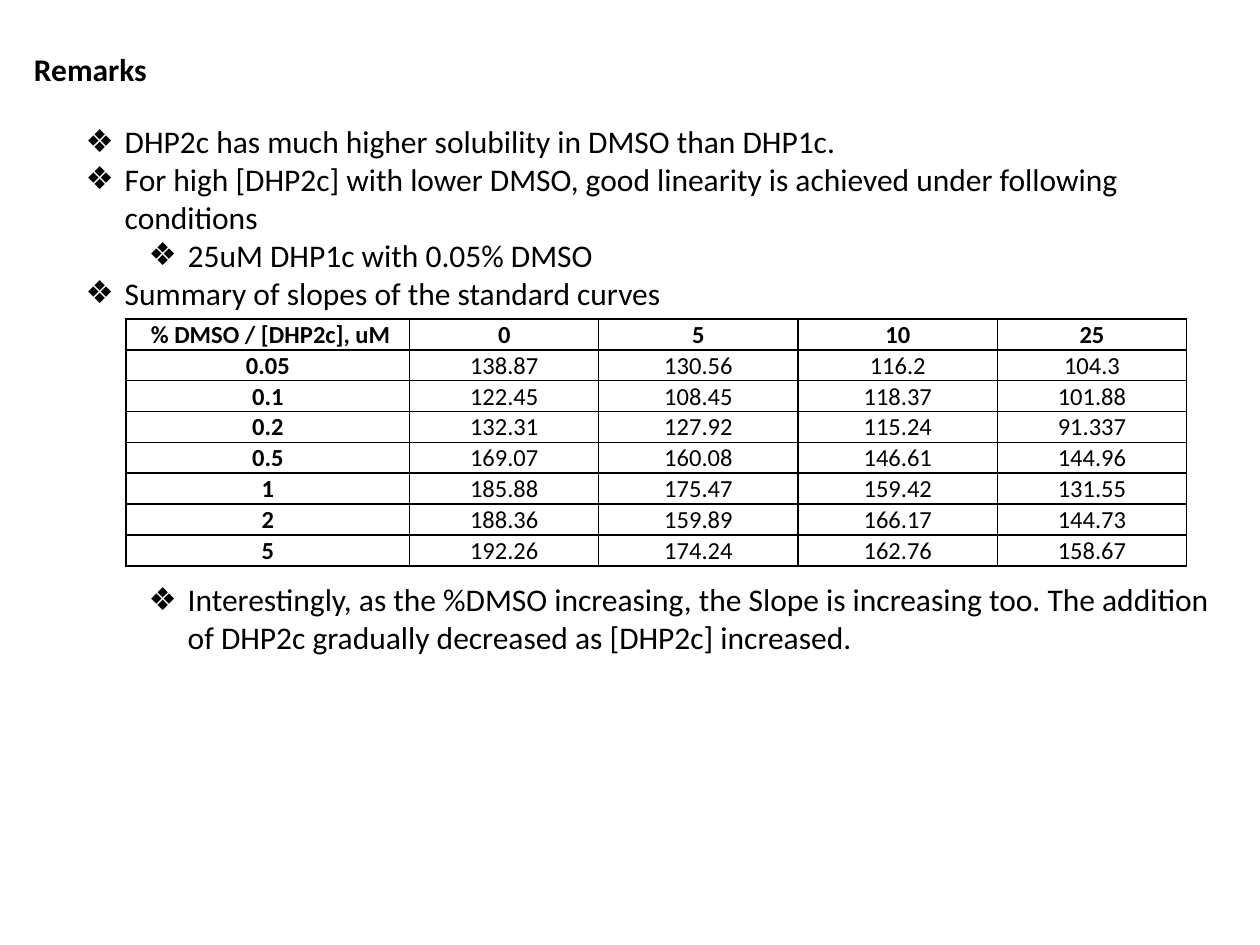
import dataclasses

import lxml.etree
import pptx
import pptx.dml.color
import pptx.enum.text
import pptx.oxml.ns
import pptx.util

Cm = pptx.util.Cm
Pt = pptx.util.Pt
ALIGN = pptx.enum.text.PP_ALIGN
ANCHOR = pptx.enum.text.MSO_ANCHOR
AUTO_SIZE = pptx.enum.text.MSO_AUTO_SIZE
qn = pptx.oxml.ns.qn

COLORS = {"ink": "000000"}
FONT = "Calibri"
LINE_HEIGHT = 1.22  # line height of the font, in ems
TEXT_SIZE = 18
TABLE_LINES = 7  # text lines that make room for the table


@dataclasses.dataclass
class Remark:
    text: str
    level: int = 0
    lines_before: int = 0


REMARKS = [
    Remark("DHP2c has much higher solubility in DMSO than DHP1c."),
    Remark("For high [DHP2c] with lower DMSO, good linearity is achieved "
           "under following conditions"),
    Remark("25uM DHP1c with 0.05% DMSO", level=1),
    Remark("Summary of slopes of the standard curves"),
    Remark("Interestingly, as the %DMSO increasing, the Slope is increasing too. "
           "The addition of DHP2c gradually decreased as [DHP2c] increased.",
           level=1, lines_before=TABLE_LINES),
]

SLOPES = [
    (" % DMSO / [DHP2c], uM", "0", "5", "10", "25"),
    ("0.05", "138.87", "130.56", "116.2", "104.3"),
    ("0.1", "122.45", "108.45", "118.37", "101.88"),
    ("0.2", "132.31", "127.92", "115.24", "91.337"),
    ("0.5", "169.07", "160.08", "146.61", "144.96"),
    ("1", "185.88", "175.47", "159.42", "131.55"),
    ("2", "188.36", "159.89", "166.17", "144.73"),
    ("5", "192.26", "174.24", "162.76", "158.67"),
]
COLUMN_WIDTHS = [Cm(5.72), Cm(3.81), Cm(4.02), Cm(4.02), Cm(3.81)]
ROW_HEIGHT = Cm(0.62)


def place(shape, left: float, top: float, width: float, height: float) -> None:
    """Move and size a shape, in centimetres."""
    shape.left, shape.top = Cm(left), Cm(top)
    shape.width, shape.height = Cm(width), Cm(height)


def set_font(para, size: int, bold: bool = False) -> None:
    font = para.font
    font.name, font.size, font.bold = FONT, Pt(size), bold
    font.color.rgb = pptx.dml.color.RGBColor.from_string(COLORS["ink"])


def set_bullet(para, level: int) -> None:
    para.level = level
    props = para._p.get_or_add_pPr()
    props.set("marL", str(Cm(0.79 + 1.27 * level)))
    props.set("indent", str(Cm(-0.79)))
    lxml.etree.SubElement(props, qn("a:buChar")).set("char", "❖")


def set_borders(cell) -> None:
    props = cell._tc.get_or_add_tcPr()
    for side in ("lnL", "lnR", "lnT", "lnB"):
        line = lxml.etree.SubElement(props, qn(f"a:{side}"), w=str(Pt(1)))
        fill = lxml.etree.SubElement(line, qn("a:solidFill"))
        lxml.etree.SubElement(fill, qn("a:srgbClr"), val=COLORS["ink"])


def fill_title(title) -> None:
    place(title, 0.43, 0.89, 2.79, 1.02)
    frame = title.text_frame
    frame.text = "Remarks"
    frame.word_wrap = False
    frame.auto_size = AUTO_SIZE.SHAPE_TO_FIT_TEXT
    frame.vertical_anchor = ANCHOR.TOP
    para = frame.paragraphs[0]
    para.alignment = ALIGN.LEFT
    set_font(para, TEXT_SIZE, bold=True)


def fill_remarks(body, remarks: list[Remark]) -> None:
    place(body, 1.47, 2.34, 23.5, 11.79)
    frame = body.text_frame
    frame.text = "\n".join(remark.text for remark in remarks)
    frame.word_wrap = True
    frame.auto_size = AUTO_SIZE.NONE
    for para, remark in zip(frame.paragraphs, remarks):
        set_bullet(para, remark.level)
        para.space_before = Pt(round(remark.lines_before * TEXT_SIZE * LINE_HEIGHT, 1))
        set_font(para, TEXT_SIZE)


def fill_cell(cell, text: str, header: bool, bold: bool) -> None:
    cell.text = text
    cell.margin_left = cell.margin_right = cell.margin_top = Cm(0.02)
    cell.margin_bottom = 0
    cell.vertical_anchor = ANCHOR.MIDDLE if header else ANCHOR.BOTTOM
    set_borders(cell)
    cell.fill.background()
    para = cell.text_frame.paragraphs[0]
    para.alignment = ALIGN.CENTER
    set_font(para, 14, bold)


def add_slope_table(page, rows: list[tuple[str, ...]]) -> None:
    table = page.shapes.add_table(
        len(rows), len(COLUMN_WIDTHS), Cm(2.54), Cm(6.43),
        sum(COLUMN_WIDTHS), ROW_HEIGHT * len(rows)).table
    table.first_row = table.horz_banding = False
    for column, width in zip(table.columns, COLUMN_WIDTHS):
        column.width = width
    for r, values in enumerate(rows):
        table.rows[r].height = ROW_HEIGHT
        for c, value in enumerate(values):
            fill_cell(table.cell(r, c), value, header=r == 0, bold=r == 0 or c == 0)


def main() -> None:
    deck = pptx.Presentation()
    deck.slide_width, deck.slide_height = Cm(25.4), Cm(19.05)
    page = deck.slides.add_slide(deck.slide_layouts.get_by_name("Title and Content"))
    fill_title(page.shapes.title)
    fill_remarks(page.placeholders[1], REMARKS)
    add_slope_table(page, SLOPES)
    deck.save("out.pptx")


if __name__ == "__main__":
    main()
